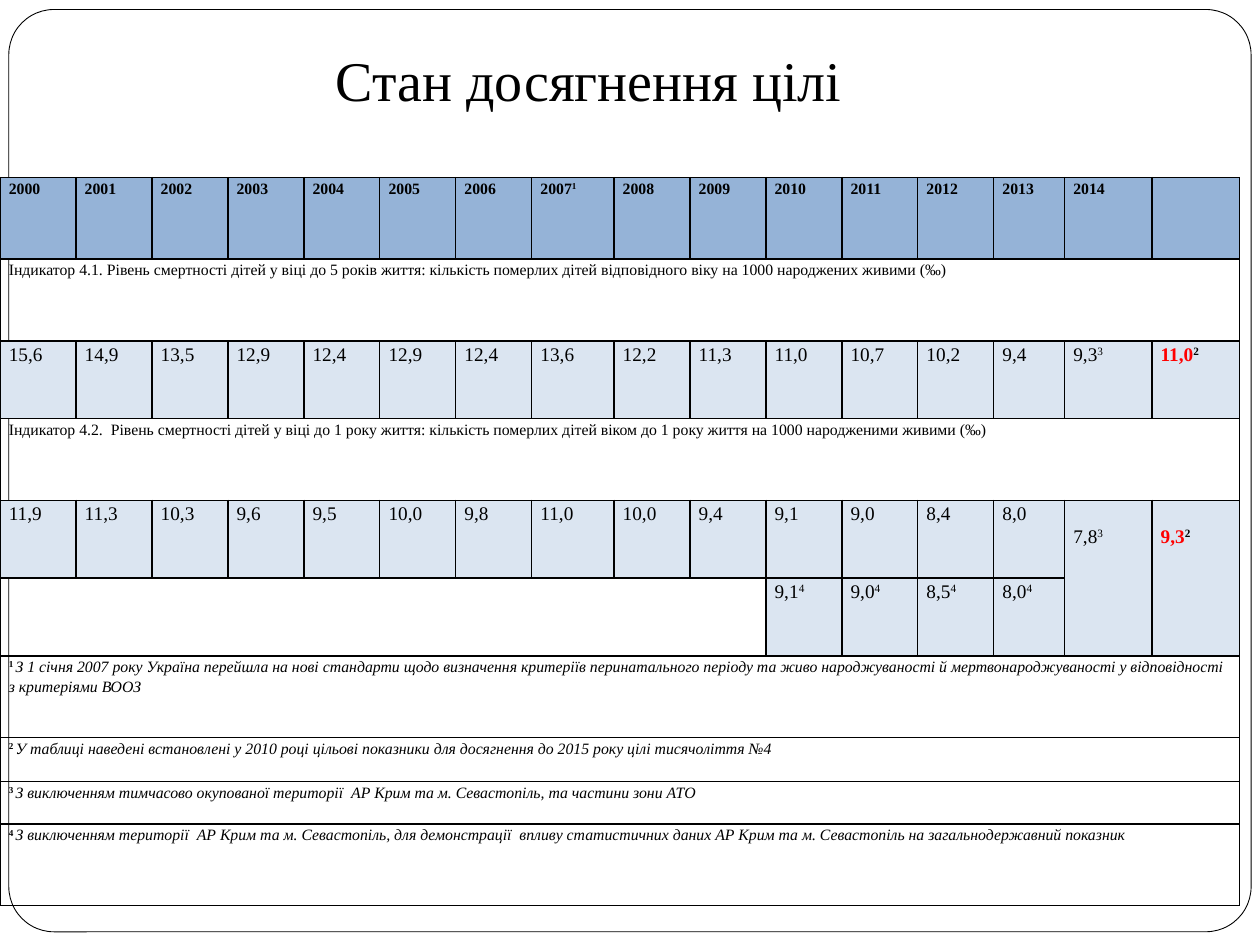
from dataclasses import dataclass

from lxml import etree
from pptx import Presentation
from pptx.dml.color import RGBColor
from pptx.enum.shapes import MSO_SHAPE
from pptx.enum.text import MSO_ANCHOR, PP_ALIGN
from pptx.oxml.ns import qn
from pptx.util import Inches, Pt

ROUNDED = MSO_SHAPE.ROUNDED_RECTANGLE
CENTER, TOP = PP_ALIGN.CENTER, MSO_ANCHOR.TOP
FONT = "Times New Roman"
COLORS = {"ink": "000000", "paper": "FFFFFF", "header": "95B3D7",
          "values": "DBE5F1", "target": "FF0000"}

# Grid of the table: relative widths and heights, scaled to its full size
TABLE_LEFT, TABLE_TOP, TABLE_WIDTH, TABLE_HEIGHT = 0, 1.41, 9.84, 5.78
COLUMNS = [0.6] * 7 + [0.65] + [0.6] * 5 + [0.56, 0.69, 0.69]
ROWS = [0.65, 0.65, 0.62, 0.65, 0.62, 0.62, 0.65, 0.35, 0.34, 0.65]
LAST = len(COLUMNS) - 1


@dataclass
class Band:
    """A row of neighbouring cells; ^ stands before a superscript mark."""
    row: int
    texts: list[str]
    fill: str
    size: float
    bold: bool = False
    first_column: int = 0


@dataclass
class FullRow:
    """A sentence over the whole table width, with an optional note mark."""
    row: int
    text: str
    mark: str = ""


BANDS = [
    Band(0, ["2000", "2001", "2002", "2003", "2004", "2005", "2006", "2007^1", "2008",
             "2009", "2010", "2011", "2012", "2013", "2014", ""], "header", 9, True),
    Band(2, ["15,6", "14,9", "13,5", "12,9", "12,4", "12,9", "12,4", "13,6", "12,2",
             "11,3", "11,0", "10,7", "10,2", "9,4", "9,3^3", "11,0^2"], "values", 11),
    Band(4, ["11,9", "11,3", "10,3", "9,6", "9,5", "10,0", "9,8", "11,0", "10,0",
             "9,4", "9,1", "9,0", "8,4", "8,0", "7,8^3", "9,3^2"], "values", 11),
    Band(5, ["9,1^4", "9,0^4", "8,5^4", "8,0^4"], "values", 11, first_column=10),
]
FULL_ROWS = [
    FullRow(1, "Індикатор 4.1. Рівень смертності дітей у віці до 5 років життя: "
               "кількість померлих дітей відповідного віку на 1000 народжених живими (‰)"),
    FullRow(3, "Індикатор 4.2.  Рівень смертності дітей у віці до 1 року життя: "
               "кількість померлих дітей віком до 1 року життя на 1000 народженими живими (‰)"),
    FullRow(6, "З 1 січня 2007 року Україна перейшла на нові стандарти щодо визначення "
               "критеріїв перинатального періоду та живо народжуваності й "
               "мертвонароджуваності у відповідності з критеріями ВООЗ", "1 "),
    FullRow(7, "У таблиці наведені встановлені у 2010 році цільові показники для "
               "досягнення до 2015 року цілі тисячоліття №4", "2 "),
    FullRow(8, "З виключенням тимчасово окупованої території  АР Крим та м. Севастопіль, "
               "та частини зони АТО", "3 "),
    FullRow(9, "З виключенням території  АР Крим та м. Севастопіль, для демонстрації  "
               "впливу статистичних даних АР Крим та м. Севастопіль на "
               "загальнодержавний показник", "4 "),
]


def add_text(paragraph, text: str, *, size: float, color: str = "ink", bold: bool = False,
             italic: bool = False, superscript: bool = False) -> None:
    run = paragraph.add_run()
    run.text = text
    font = run.font
    font.name, font.size, font.bold, font.italic = FONT, Pt(size), bold, italic
    font.color.rgb = RGBColor.from_string(COLORS[color])
    if superscript:
        run._r.get_or_add_rPr().set("baseline", "30000")


def add_border(cell) -> None:
    properties = cell._tc.get_or_add_tcPr()
    for side in ("lnL", "lnR", "lnT", "lnB"):
        line = etree.SubElement(properties, qn(f"a:{side}"), w=str(Pt(1)))
        solid = etree.SubElement(line, qn("a:solidFill"))
        etree.SubElement(solid, qn("a:srgbClr"), val=COLORS["ink"])


def draw_frame(slide, width: int, height: int) -> None:
    frame = slide.shapes.add_shape(ROUNDED, round(width * 0.007), round(height * 0.01),
                                   round(width * 0.986), round(height * 0.976))
    frame.adjustments[0] = 0.049
    frame.shadow.inherit = False
    frame.fill.solid()
    frame.fill.fore_color.rgb = RGBColor.from_string(COLORS["paper"])
    frame.line.color.rgb = RGBColor.from_string(COLORS["ink"])
    frame.line.width = Pt(0.5)


def draw_grid(slide):
    table = slide.shapes.add_table(
        len(ROWS), len(COLUMNS), Inches(TABLE_LEFT), Inches(TABLE_TOP),
        Inches(TABLE_WIDTH), Inches(TABLE_HEIGHT)).table
    table.first_row = table.horz_banding = False
    for column, share in zip(table.columns, COLUMNS):
        column.width = Inches(TABLE_WIDTH * share / sum(COLUMNS))
    for row, share in zip(table.rows, ROWS):
        row.height = Inches(TABLE_HEIGHT * share / sum(ROWS))
    for cell in table.iter_cells():
        add_border(cell)
        cell.fill.background()
        cell.margin_left = cell.margin_right = Inches(0.07)
        cell.margin_top = cell.margin_bottom = 0
        cell.vertical_anchor = TOP
        cell.text_frame.paragraphs[0].line_spacing = 1.15
    return table


def fill_band(table, band: Band) -> None:
    for column, text in enumerate(band.texts, band.first_column):
        cell = table.cell(band.row, column)
        cell.fill.solid()
        cell.fill.fore_color.rgb = RGBColor.from_string(COLORS[band.fill])
        value, _, mark = text.partition("^")
        is_target = column == LAST
        bold = band.bold or is_target
        paragraph = cell.text_frame.paragraphs[0]
        if value:
            add_text(paragraph, value, size=band.size, bold=bold,
                     color="target" if is_target else "ink")
        if mark:
            add_text(paragraph, mark, size=band.size, bold=bold, superscript=True)


def fill_full_row(table, full_row: FullRow) -> None:
    cell = table.cell(full_row.row, 0)
    cell.merge(table.cell(full_row.row, LAST))
    paragraph = cell.text_frame.paragraphs[0]
    if full_row.mark:
        add_text(paragraph, full_row.mark, size=9, bold=True, superscript=True)
    add_text(paragraph, full_row.text, size=9, italic=bool(full_row.mark))


def main() -> None:
    presentation = Presentation()
    presentation.slide_width, presentation.slide_height = Inches(10), Inches(7.5)
    slide = presentation.slides.add_slide(presentation.slide_layouts[6])
    draw_frame(slide, presentation.slide_width, presentation.slide_height)

    # Indicators and notes
    table = draw_grid(slide)
    for band in BANDS:
        fill_band(table, band)
    for full_row in FULL_ROWS:
        fill_full_row(table, full_row)

    # The gap before 2010, and the latest values set one line lower over two rows
    table.cell(5, 0).merge(table.cell(5, 9))
    for column in (LAST - 1, LAST):
        latest = table.cell(4, column)
        latest.merge(table.cell(5, column))
        latest.margin_top = Inches(0.18)

    # Title
    title = slide.shapes.add_textbox(Inches(1.41), Inches(0.31), Inches(6.64), Inches(0.64))
    title.text_frame.word_wrap = True
    heading = title.text_frame.paragraphs[0]
    heading.alignment = CENTER
    add_text(heading, "Стан досягнення цілі ", size=32)

    presentation.save("out.pptx")


if __name__ == "__main__":
    main()
